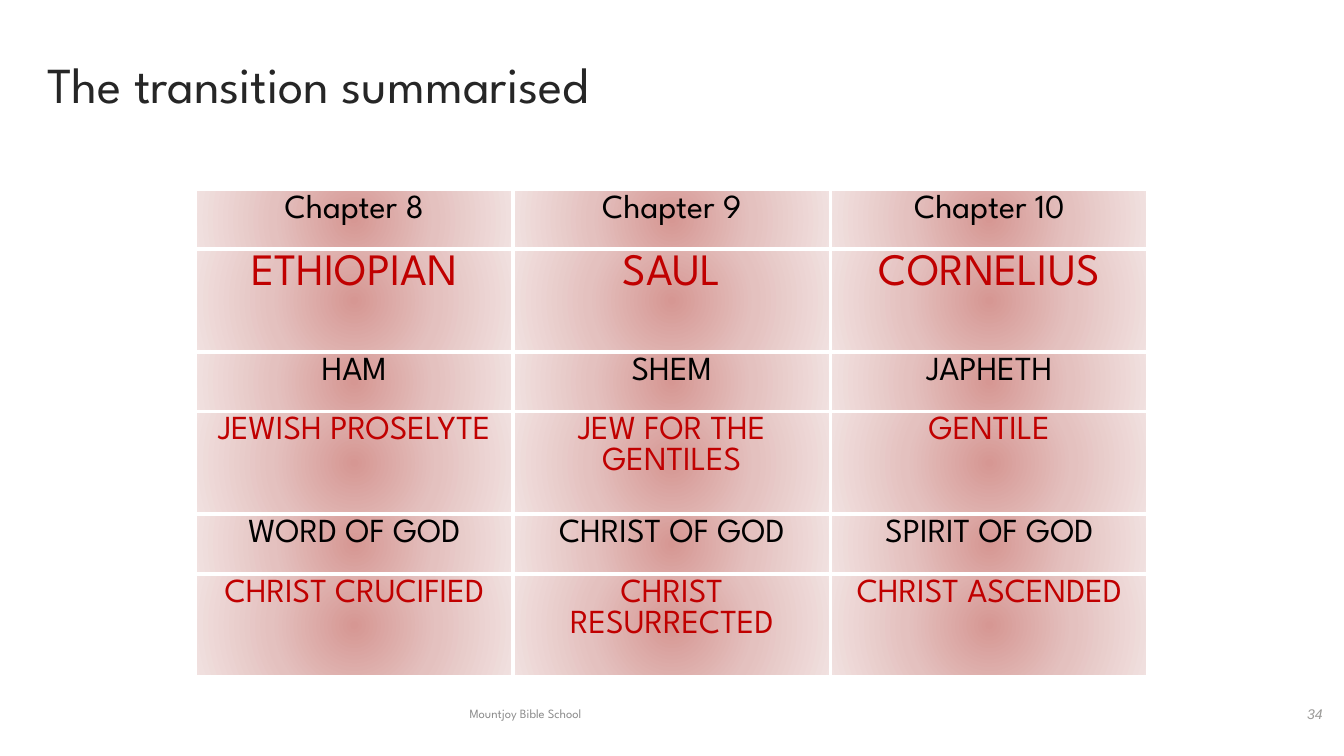
import pptx
import pptx.dml.color
import pptx.enum.text
import pptx.oxml
import pptx.oxml.ns
import pptx.util

Pt = pptx.util.Pt
ALIGN = pptx.enum.text.PP_ALIGN
ANCHOR = pptx.enum.text.MSO_ANCHOR
HEADING_FONT = "League Spartan"
BLACK, RED, WHITE = "000000", "C00000", "FFFFFF"
CELL_GLOW = ((0, "D69793"), (50, "E4C1BF"), (100, "F1E1E0"))
SHORT_ROW, TALL_ROW = 42.5, 73.5

SUMMARY = (
    (SHORT_ROW, 24, BLACK, ("Chapter 8", "Chapter 9", "Chapter 10")),
    (TALL_ROW, 32, RED, ("ETHIOPIAN", "SAUL", "CORNELIUS")),
    (SHORT_ROW, 24, BLACK, ("HAM", "SHEM", "JAPHETH")),
    (TALL_ROW, 24, RED, ("JEWISH PROSELYTE", "JEW FOR THE GENTILES", "GENTILE")),
    (SHORT_ROW, 24, BLACK, ("WORD OF GOD", "CHRIST OF GOD", "SPIRIT OF GOD")),
    (TALL_ROW, 24, RED, ("CHRIST CRUCIFIED", "CHRIST RESURRECTED", "CHRIST ASCENDED")),
)


def color(value):
    return pptx.dml.color.RGBColor.from_string(value)


def style(paragraph, size, ink, align, font_name=HEADING_FONT):
    paragraph.alignment = align
    paragraph.font.name = font_name
    paragraph.font.size = Pt(size)
    paragraph.font.color.rgb = color(ink)


def add_text(slide, box, words, size, ink, align=ALIGN.LEFT,
             anchor=ANCHOR.MIDDLE, font_name=HEADING_FONT):
    frame = slide.shapes.add_textbox(*map(Pt, box)).text_frame
    frame.word_wrap = True
    frame.vertical_anchor = anchor
    frame.text = words
    style(frame.paragraphs[0], size, ink, align, font_name)
    return frame


def add_title(slide, box):
    title = add_text(slide, box, "The transition summarised", 36, "262626",
                     anchor=ANCHOR.TOP)
    title.margin_top = Pt(15.6)


def decorate(cell):
    properties = cell._tc.get_or_add_tcPr()
    namespace = pptx.oxml.ns.nsdecls("a")
    for side in ("lnL", "lnR", "lnT", "lnB"):
        properties.append(pptx.oxml.parse_xml(
            f'<a:{side} {namespace} w="{Pt(3)}"><a:solidFill>'
            f'<a:srgbClr val="{WHITE}"/></a:solidFill></a:{side}>'))
    stops = "".join(
        f'<a:gs pos="{percent * 1000}"><a:srgbClr val="{tint}"/></a:gs>'
        for percent, tint in CELL_GLOW)
    properties.append(pptx.oxml.parse_xml(
        f'<a:gradFill {namespace} rotWithShape="1"><a:gsLst>{stops}</a:gsLst>'
        '<a:path path="circle"><a:fillToRect l="50000" t="50000" r="50000" '
        'b="50000"/></a:path></a:gradFill>'))


def add_summary(slide, box):
    column_count = len(SUMMARY[0][3])
    table = slide.shapes.add_table(len(SUMMARY), column_count, *map(Pt, box)).table
    table.first_row = False
    table.horz_banding = False
    for column in table.columns:
        column.width = Pt(box[2] / column_count)
    for row, (height, size, ink, entries) in zip(table.rows, SUMMARY):
        row.height = Pt(height)
        for cell, entry in zip(row.cells, entries):
            cell.text = entry
            style(cell.text_frame.paragraphs[0], size, ink, ALIGN.CENTER)
            decorate(cell)


def add_footer(slide, box):
    left, top, width, height = box
    school_width, number_width = 304, 200
    add_text(slide, (left, top, school_width, height), "Mountjoy Bible School",
             9, "8C8C8C")
    number = add_text(slide, (left + width - number_width, top, number_width, height),
                      "34", 10, "9B9A98", ALIGN.RIGHT, font_name="Arial")
    number.paragraphs[0].font.italic = True


def main():
    deck = pptx.Presentation()
    deck.slide_width, deck.slide_height = Pt(960), Pt(540)
    slide = deck.slides.add_slide(deck.slide_layouts[6])
    add_title(slide, (26.6, 22.3, 907, 90))
    add_summary(slide, (139.7, 135.4, 680.4, 348))
    add_footer(slide, (328.3, 491.8, 623.5, 36))
    deck.save("out.pptx")


if __name__ == "__main__":
    main()
